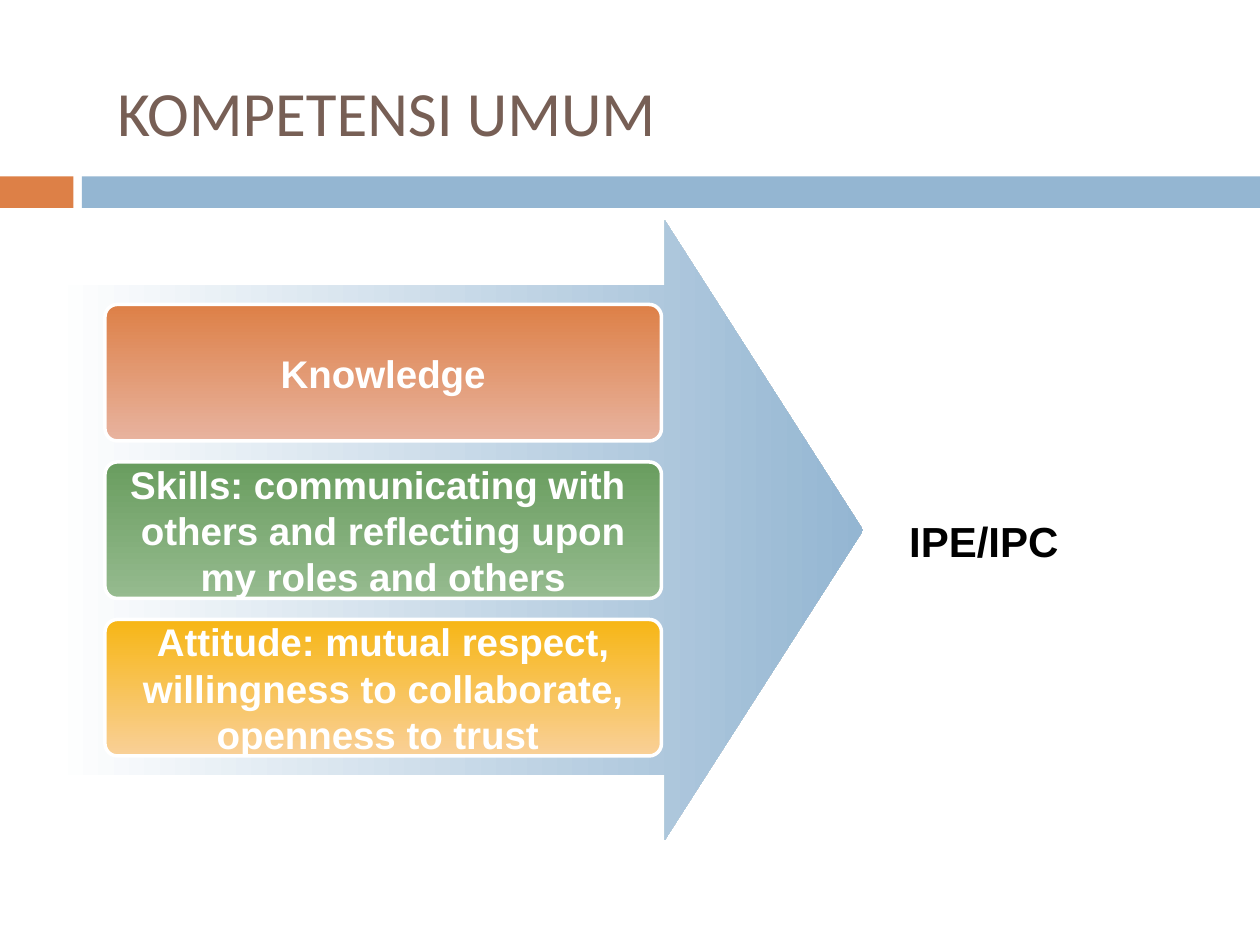
"""Build the KOMPETENSI UMUM slide: three competences inside an arrow leading to IPE/IPC."""
from pptx import Presentation
from pptx.dml.color import RGBColor
from pptx.enum.shapes import MSO_SHAPE
from pptx.enum.text import MSO_ANCHOR, PP_ALIGN
from pptx.util import Inches, Pt

COLORS = {
    "orange": "DD8047", "light orange": "E8B39F",
    "green": "699D5F", "light green": "96BB8F",
    "yellow": "F7B615", "light yellow": "F9D098",
    "blue": "94B6D2", "brown": "775F55",
    "white": "FFFFFF", "black": "000000",
}
TITLE = "KOMPETENSI UMUM"
OUTCOME = "IPE/IPC"
COMPETENCES = [
    ("orange", ["Knowledge"]),
    ("green", ["Skills: communicating with ", "others and reflecting upon", "my roles and others"]),
    ("yellow", ["Attitude: mutual respect,", "willingness to collaborate,", "openness to trust "]),
]
BARS = [("orange", 0, 7), ("blue", 7.8, 112.2)]

COLUMNS, ROWS = 120, 90
CARD_LEFT, CARD_TOP, CARD_WIDTH, CARD_HEIGHT, CARD_STEP = 10, 29, 53, 13, 15

deck = Presentation()
deck.slide_width, deck.slide_height = Inches(10), Inches(7.5)
page = deck.slides.add_slide(deck.slide_layouts[6])


def color(name):
    return RGBColor.from_string(COLORS[name])


def place(left, top, width, height):
    across, down = deck.slide_width / COLUMNS, deck.slide_height / ROWS
    return [round(n) for n in (left * across, top * down, width * across, height * down)]


def add_box(kind, cells, fill=None, angle=0):
    box = page.shapes.add_shape(kind, *place(*cells))
    box.shadow.inherit = False
    box.line.fill.background()
    if fill is None:
        box.fill.background()
    elif isinstance(fill, str):
        box.fill.solid()
        box.fill.fore_color.rgb = color(fill)
    else:
        box.fill.gradient()
        box.fill.gradient_angle = angle
        for stop, name, position in zip(box.fill.gradient_stops, fill, (0, 1)):
            stop.color.rgb = color(name)
            stop.position = position
    return box


def write(box, lines, size, ink, font="Arial", bold=True,
          align=PP_ALIGN.CENTER, anchor=MSO_ANCHOR.MIDDLE, wrap=True):
    frame = box.text_frame
    frame.word_wrap = wrap
    frame.vertical_anchor = anchor
    frame.text = "\n".join(lines)
    for para in frame.paragraphs:
        para.alignment = align
        para.font.name, para.font.size, para.font.bold = font, Pt(size), bold
        para.font.color.rgb = color(ink)


for name, left, width in BARS:
    add_box(MSO_SHAPE.RECTANGLE, (left, 16.8, width, 3), name)

title = page.shapes.add_textbox(*place(10, 4.3, 89, 10.5))
write(title, [TITLE], 36, "brown", "Calibri", False, PP_ALIGN.LEFT, MSO_ANCHOR.BOTTOM)
title.height = place(0, 0, 0, 10.5)[3]

arrow = add_box(MSO_SHAPE.RIGHT_ARROW, (5, 21, 77.2, 59), ("white", "blue"))
arrow.adjustments[0], arrow.adjustments[1] = 0.79, 0.32

for row, (name, lines) in enumerate(COMPETENCES):
    cells = (CARD_LEFT, CARD_TOP + row * CARD_STEP, CARD_WIDTH, CARD_HEIGHT)
    card = add_box(MSO_SHAPE.ROUNDED_RECTANGLE, cells, (name, "light " + name), 270)
    card.adjustments[0] = 0.09
    card.line.color.rgb = color("white")
    card.line.width = Pt(2)
    write(card, lines, 22, "white", wrap=False)

outcome = add_box(MSO_SHAPE.ROUNDED_RECTANGLE, (77.2, 43, 33, 17))
outcome.adjustments[0] = 0.09
write(outcome, [OUTCOME], 24, "black")

deck.save("out.pptx")
